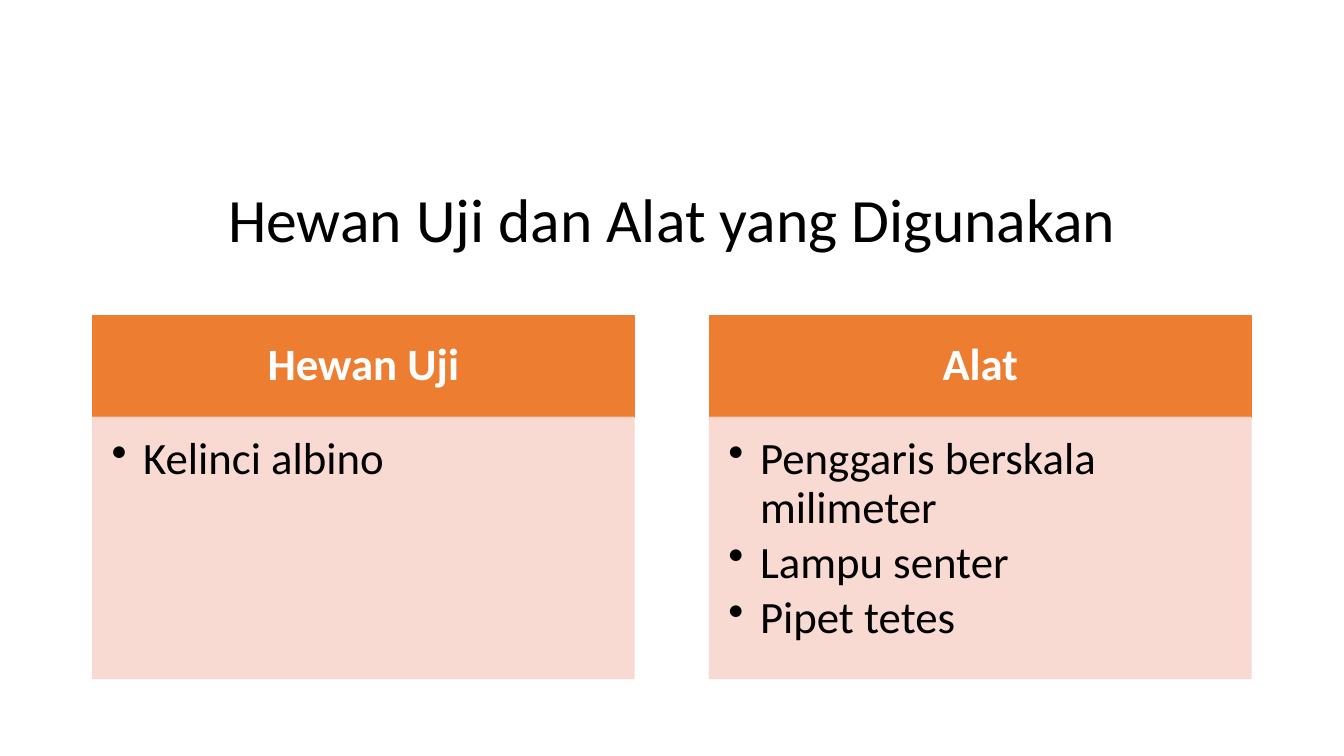
"""Build the slide listing the test animal and the tools used."""
import pptx
import pptx.dml.color
import pptx.enum.shapes
import pptx.enum.text
import pptx.oxml
import pptx.oxml.ns
import pptx.util

Pt = pptx.util.Pt
RGB = pptx.dml.color.RGBColor.from_string
ALIGN = pptx.enum.text.PP_ALIGN
ANCHOR = pptx.enum.text.MSO_ANCHOR
COLORS = {"text": "000000", "header": "ED7D31", "header_text": "FFFFFF", "body": "F8D7CE"}
LEFT, COLUMN_STEP, COLUMN_WIDTH = 66.24, 440.64, 386.64
HEADER_TOP, HEADER_HEIGHT, BODY_HEIGHT = 225.36, 72.72, 186.48
COLUMNS = [
    ("Hewan Uji", ["Kelinci albino"]),
    ("Alat", ["Penggaris berskala milimeter", "Lampu senter", "Pipet tetes"]),
]
FRAMES = {
    "title": {"vertical_anchor": ANCHOR.MIDDLE},
    "header": {"vertical_anchor": ANCHOR.MIDDLE, "margin_left": Pt(18), "margin_top": Pt(10),
               "margin_right": Pt(18), "margin_bottom": Pt(10)},
    "body": {"vertical_anchor": ANCHOR.TOP, "margin_left": Pt(13.5), "margin_top": Pt(13.5),
             "margin_right": Pt(18), "margin_bottom": Pt(20)},
}
PARAGRAPHS = {
    "title": {"alignment": ALIGN.CENTER, "line_spacing": 0.9},
    "header": {"alignment": ALIGN.CENTER, "line_spacing": 0.9},
    "body": {"alignment": ALIGN.LEFT, "line_spacing": 0.9, "space_after": Pt(4.8), "level": 1},
}
FONTS = {
    "title": {"name": "Calibri", "size": Pt(44)},
    "header": {"name": "Calibri", "size": Pt(32), "bold": True},
    "body": {"name": "Calibri", "size": Pt(32)},
}


def write(sp, role, lines, color):
    tf = sp.text_frame
    tf.word_wrap = True
    for name, value in FRAMES[role].items():
        setattr(tf, name, value)
    for i, line in enumerate(lines):
        p = tf.paragraphs[0] if i == 0 else tf.add_paragraph()
        for name, value in PARAGRAPHS[role].items():
            setattr(p, name, value)
        if role == "body":
            pPr = p._p.get_or_add_pPr()
            pPr.set("marL", str(Pt(22.5)))
            pPr.set("indent", str(-Pt(22.5)))
            bullet = pptx.oxml.parse_xml(f'<a:buChar {pptx.oxml.ns.nsdecls("a")} char="•"/>')
            pPr.append(bullet)
        r = p.add_run()
        r.text = line
        for name, value in FONTS[role].items():
            setattr(r.font, name, value)
        r.font.color.rgb = RGB(color)


def panel(s, left, top, height, role):
    sp = s.shapes.add_shape(pptx.enum.shapes.MSO_SHAPE.RECTANGLE,
                            Pt(left), Pt(top), Pt(COLUMN_WIDTH), Pt(height))
    sp.shadow.inherit = False
    sp.fill.solid()
    sp.line.width = Pt(1)
    for fill in (sp.fill, sp.line.fill):
        fill.solid()
        fill.fore_color.rgb = RGB(COLORS[role])
    if role == "body":
        for color in sp._element.spPr.iter(pptx.oxml.ns.qn("a:srgbClr")):
            color.append(pptx.oxml.parse_xml(f'<a:alpha {pptx.oxml.ns.nsdecls("a")} val="90000"/>'))
    return sp


prs = pptx.Presentation()
prs.slide_width, prs.slide_height = Pt(960), Pt(540)
s = prs.slides.add_slide(prs.slide_layouts[6])

title = s.shapes.add_textbox(Pt(LEFT), Pt(108.72), Pt(828), Pt(100.8))
write(title, "title", ["Hewan Uji dan Alat yang Digunakan"], COLORS["text"])

for i, (heading, items) in enumerate(COLUMNS):
    left = LEFT + i * COLUMN_STEP
    header = panel(s, left, HEADER_TOP, HEADER_HEIGHT, "header")
    write(header, "header", [heading], COLORS["header_text"])
    body = panel(s, left, HEADER_TOP + HEADER_HEIGHT, BODY_HEIGHT, "body")
    write(body, "body", items, COLORS["text"])

prs.save("out.pptx")
